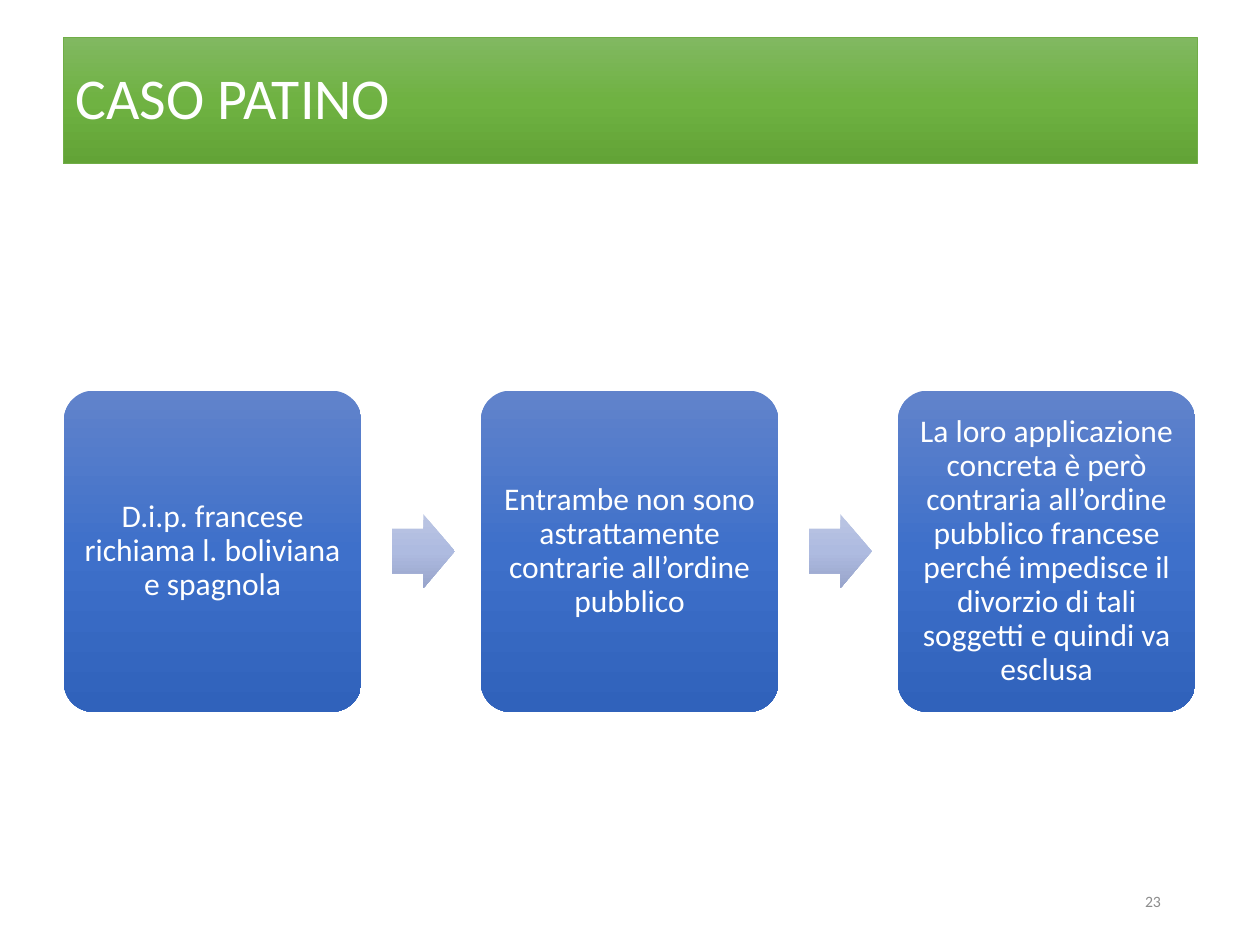
from copy import deepcopy
from typing import NamedTuple

from pptx import Presentation
from pptx.dml.color import RGBColor
from pptx.enum.shapes import MSO_SHAPE
from pptx.enum.text import MSO_ANCHOR, MSO_AUTO_SIZE, PP_ALIGN
from pptx.oxml.ns import qn
from pptx.util import Pt

BOX = MSO_SHAPE.ROUNDED_RECTANGLE
ARROW = MSO_SHAPE.RIGHT_ARROW
MIDDLE = MSO_ANCHOR.MIDDLE
NO_FIT = MSO_AUTO_SIZE.NONE
LEFT, CENTER, RIGHT = PP_ALIGN.LEFT, PP_ALIGN.CENTER, PP_ALIGN.RIGHT

WHITE = RGBColor(0xFF, 0xFF, 0xFF)
GRAY = RGBColor(0x8C, 0x8C, 0x8C)
GREEN = RGBColor(0x70, 0xAD, 0x47)
GREENS = (RGBColor(0x81, 0xB8, 0x61), RGBColor(0x6F, 0xB2, 0x42),
          RGBColor(0x62, 0xA3, 0x36))
BLUES = (RGBColor(0x61, 0x83, 0xCB), RGBColor(0x3E, 0x70, 0xCA),
         RGBColor(0x30, 0x62, 0xBB))
PALES = (RGBColor(0xBB, 0xC5, 0xE3), RGBColor(0xAE, 0xBB, 0xE0),
         RGBColor(0x98, 0xA4, 0xCB))

FONT = "Calibri"
STEPS = (
    "D.i.p. francese richiama l. boliviana e spagnola",
    "Entrambe non sono astrattamente contrarie all’ordine pubblico",
    "La loro applicazione concreta è però contraria all’ordine pubblico "
    "francese perché impedisce il divorzio di tali soggetti e quindi va "
    "esclusa",
)


class Area(NamedTuple):
    left: float
    top: float
    width: float
    height: float

    def shift(self, dx: float) -> "Area":
        return self._replace(left=self.left + dx)


class Style(NamedTuple):
    size: float
    color: RGBColor
    align: PP_ALIGN
    lines: float = 1.0


TITLE = Area(36, 21.6, 648, 72)
STEP = Area(36.5, 223.2, 170, 183.6)
LINK = Area(223.9, 293.8, 36, 42.4)
PAGE = Area(508.5, 500.4, 162, 28.8)
PITCH = 238.3


def place(shape, area: Area) -> None:
    shape.left, shape.top, shape.width, shape.height = map(Pt, area)


def shade(shape, colors: tuple) -> None:
    """Fill from top to bottom with evenly spaced colours."""
    fill = shape.fill
    fill.gradient()
    fill.gradient_angle = 270
    stops = shape._element.spPr.find(".//" + qn("a:gsLst"))
    while len(stops) < len(colors):
        stops.append(deepcopy(stops[0]))
    for i, (stop, color) in enumerate(zip(fill.gradient_stops, colors)):
        stop.position = i / (len(colors) - 1)
        stop.color.rgb = color


def write(shape, text: str, style: Style) -> None:
    frame = shape.text_frame
    frame.word_wrap = True
    frame.auto_size = NO_FIT
    frame.vertical_anchor = MIDDLE
    para = frame.paragraphs[0]
    para.alignment = style.align
    para.line_spacing = style.lines
    run = para.add_run()
    run.text = text
    run.font.name = FONT
    run.font.size = Pt(style.size)
    run.font.color.rgb = style.color


def draw(slide, kind: MSO_SHAPE, area: Area, colors: tuple):
    shape = slide.shapes.add_shape(kind, *map(Pt, area))
    shape.shadow.inherit = False
    shape.line.fill.background()
    shade(shape, colors)
    return shape


def add_step(slide, area: Area, text: str) -> None:
    box = draw(slide, BOX, area, BLUES)
    box.adjustments[0] = 0.1
    frame = box.text_frame
    frame.margin_left = frame.margin_right = Pt(5)
    frame.margin_top = frame.margin_bottom = Pt(5)
    write(box, text, Style(18, WHITE, CENTER, 0.9))


def add_link(slide, area: Area) -> None:
    arrow = draw(slide, ARROW, area, PALES)
    arrow.adjustments[0] = 0.6
    arrow.adjustments[1] = 0.5


def main() -> None:
    deck = Presentation()
    deck.slide_width, deck.slide_height = Pt(720), Pt(540)
    slide = deck.slides.add_slide(deck.slide_layouts[5])

    # Title band
    title = slide.shapes.title
    place(title, TITLE)
    shade(title, GREENS)
    title.line.color.rgb = GREEN
    title.line.width = Pt(0.5)
    write(title, "CASO PATINO", Style(33, WHITE, LEFT, 0.9))

    # Steps, with an arrow between neighbours
    for i, text in enumerate(STEPS):
        if i:
            add_link(slide, LINK.shift((i - 1) * PITCH))
        add_step(slide, STEP.shift(i * PITCH), text)

    # Page number
    page = slide.shapes.add_textbox(*map(Pt, PAGE))
    write(page, "23", Style(9, GRAY, RIGHT))

    deck.save("out.pptx")


if __name__ == "__main__":
    main()
